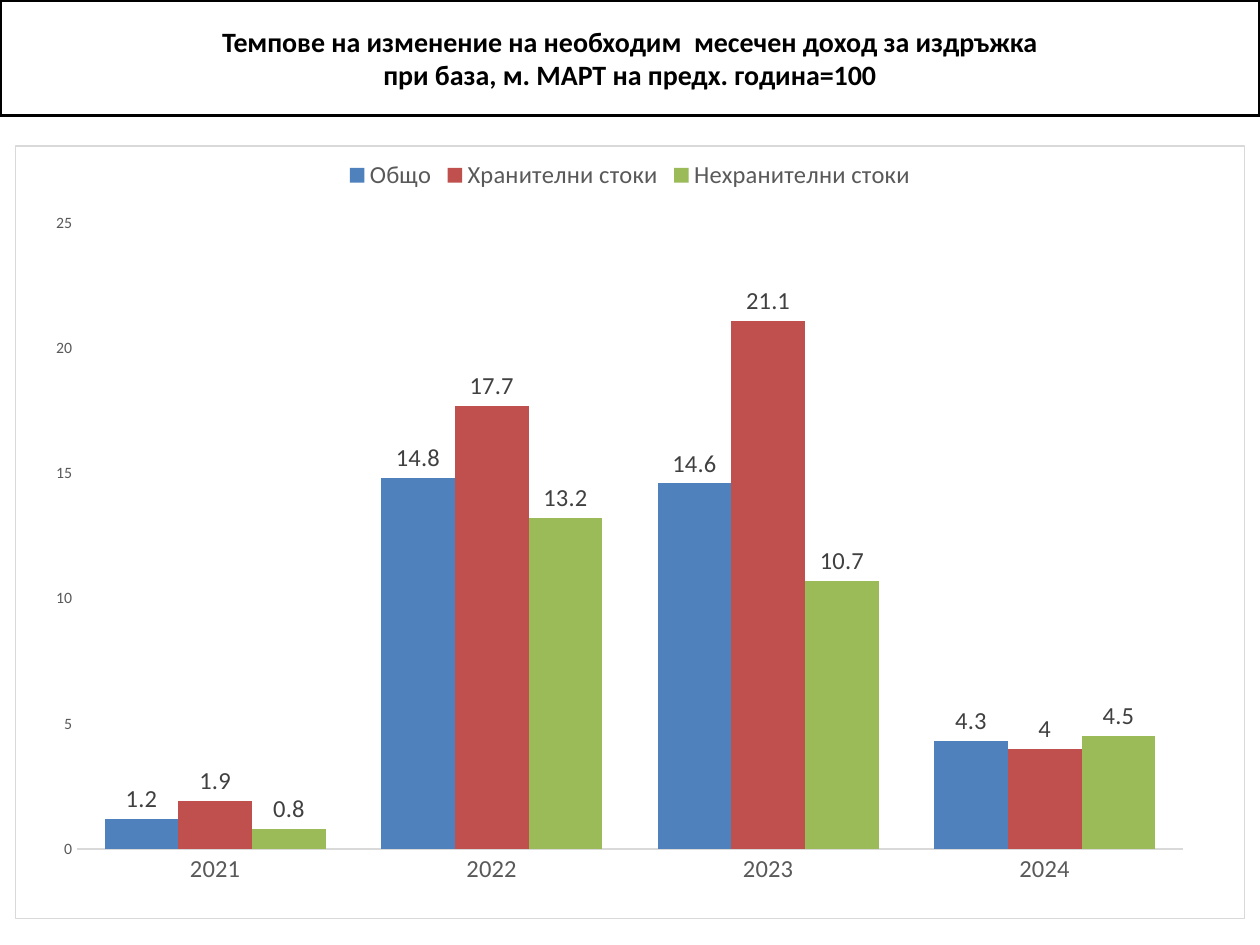
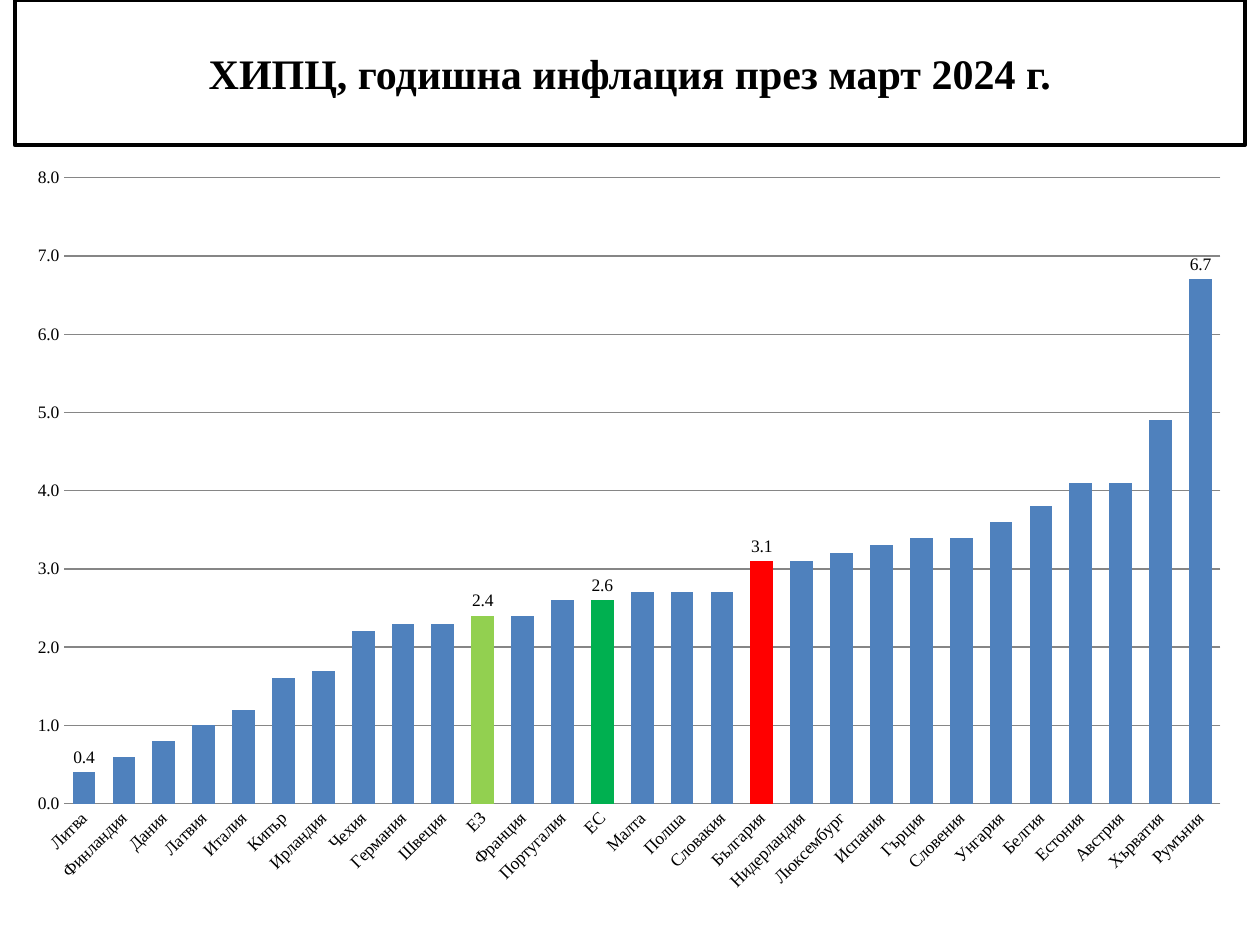
from lxml import etree
from pptx import Presentation
from pptx.chart.data import CategoryChartData
from pptx.dml.color import RGBColor
from pptx.enum.chart import XL_CHART_TYPE, XL_LABEL_POSITION, XL_LEGEND_POSITION, XL_TICK_MARK
from pptx.enum.shapes import MSO_SHAPE
from pptx.enum.text import MSO_ANCHOR, PP_ALIGN
from pptx.oxml import parse_xml
from pptx.oxml.ns import nsdecls, qn
from pptx.util import Cm, Pt

COLUMNS = XL_CHART_TYPE.COLUMN_CLUSTERED
OUTSIDE_END = XL_LABEL_POSITION.OUTSIDE_END
LEGEND_TOP = XL_LEGEND_POSITION.TOP
NO_TICK = XL_TICK_MARK.NONE
RECTANGLE = MSO_SHAPE.RECTANGLE
MIDDLE = MSO_ANCHOR.MIDDLE
CENTER = PP_ALIGN.CENTER

BLACK, WHITE, BLUE = "000000", "FFFFFF", "4F81BD"
TEXT_GREY, LABEL_GREY, RULE_GREY, GRID_GREY = "595959", "404040", "D9D9D9", "868686"
SLIDE_WIDTH, SLIDE_HEIGHT = 25.4, 19.05
MARGIN = 0.3
CONTENT_WIDTH = SLIDE_WIDTH - 2 * MARGIN


def color(hex_code):
    return RGBColor.from_string(hex_code)


def add_chart_slide(title, title_box, title_size, font_name, chart_top, chart_height,
                    categories, series, plot_box, axis_maximum, axis_step):
    """Add a slide with a framed title and a column chart; return the chart."""
    slide = presentation.slides.add_slide(presentation.slide_layouts[6])

    shape = slide.shapes.add_shape(RECTANGLE, *[Cm(length) for length in title_box])
    shape.shadow.inherit = False
    shape.fill.solid()
    shape.fill.fore_color.rgb = color(WHITE)
    shape.line.color.rgb = color(BLACK)
    shape.line.width = Pt(2)
    text_frame = shape.text_frame
    text_frame.word_wrap = True
    text_frame.vertical_anchor = MIDDLE
    paragraph = text_frame.paragraphs[0]
    paragraph.text = title
    paragraph.alignment = CENTER
    for run in paragraph.runs:
        run.font.name = font_name
        run.font.size = Pt(title_size)
        run.font.bold = True
        run.font.color.rgb = color(BLACK)

    chart_data = CategoryChartData()
    chart_data.categories = categories
    for name, values in series:
        chart_data.add_series(name, values)
    chart = slide.shapes.add_chart(COLUMNS, Cm(MARGIN), Cm(chart_top), Cm(CONTENT_WIDTH),
                                   Cm(chart_height), chart_data).chart
    chart.has_title = False
    chart.has_legend = False
    chart.font.name = font_name
    chart.font.size = Pt(10)
    chart.font.color.rgb = color(BLACK)
    chart.plots[0].gap_width = 75
    chart.plots[0].vary_by_categories = False
    for axis in (chart.category_axis, chart.value_axis):
        axis.major_tick_mark = NO_TICK
        axis.minor_tick_mark = NO_TICK
    chart.value_axis.has_major_gridlines = False
    chart.value_axis.minimum_scale = 0
    chart.value_axis.maximum_scale = axis_maximum
    chart.value_axis.major_unit = axis_step
    chart.value_axis.format.line.fill.background()

    plot_area = chart.element.find(".//" + qn("c:plotArea"))
    for old_layout in plot_area.findall(qn("c:layout")):
        plot_area.remove(old_layout)
    layout = etree.Element(qn("c:layout"))
    manual = etree.SubElement(layout, qn("c:manualLayout"))
    settings = [("layoutTarget", "inner"), ("xMode", "edge"), ("yMode", "edge")]
    for tag, value in settings + list(zip("xywh", plot_box)):
        etree.SubElement(manual, qn("c:" + tag)).set("val", str(value))
    plot_area.insert(0, layout)
    return chart


presentation = Presentation()
presentation.slide_width = Cm(SLIDE_WIDTH)
presentation.slide_height = Cm(SLIDE_HEIGHT)

# Slide 1: monthly income needed, by year
income_series = [
    ("Общо", (1.2, 14.8, 14.6, 4.3), BLUE),
    ("Хранителни стоки", (1.9, 17.7, 21.1, 4), "C0504D"),
    ("Нехранителни стоки", (0.8, 13.2, 10.7, 4.5), "9BBB59"),
]
income_chart = add_chart_slide(
    "Темпове на изменение на необходим  месечен доход за издръжка\v"
    "при база, м. МАРТ на предх. година=100",
    (0, 0, SLIDE_WIDTH, 2.33), 16, "Calibri", 2.93, 15.6,
    ["2021", "2022", "2023", "2024"], [entry[:2] for entry in income_series],
    (0.05, 0.1, 0.9, 0.81), 25, 5)
income_chart.plots[0].overlap = 0
for series, (name, values, fill) in zip(income_chart.plots[0].series, income_series):
    series.format.fill.solid()
    series.format.fill.fore_color.rgb = color(fill)
    labels = series.data_labels
    labels.show_value = True
    labels.position = OUTSIDE_END
    labels.font.size = Pt(14)
    labels.font.name = "Calibri"
    labels.font.color.rgb = color(LABEL_GREY)

income_chart.has_legend = True
income_chart.legend.position = LEGEND_TOP
income_chart.legend.include_in_layout = False
for font, size in ((income_chart.legend.font, 14),
                   (income_chart.category_axis.tick_labels.font, 14),
                   (income_chart.value_axis.tick_labels.font, 9)):
    font.size = Pt(size)
    font.name = "Calibri"
    font.color.rgb = color(TEXT_GREY)
income_chart.category_axis.format.line.color.rgb = color(RULE_GREY)
income_chart.category_axis.format.line.width = Pt(0.75)

chart_frame = parse_xml(
    f'<c:spPr {nsdecls("c", "a")}>'
    f'<a:solidFill><a:srgbClr val="{WHITE}"/></a:solidFill>'
    f'<a:ln w="{int(Pt(0.75))}"><a:solidFill><a:srgbClr val="{RULE_GREY}"/></a:solidFill></a:ln>'
    '</c:spPr>')
income_chart.element.find(qn("c:chart")).addnext(chart_frame)

# Slide 2: yearly inflation by country
inflation = {
    "Литва": 0.4, "Финландия": 0.6, "Дания": 0.8, "Латвия": 1, "Италия": 1.2,
    "Кипър": 1.6, "Ирландия": 1.7, "Чехия": 2.2, "Германия": 2.3, "Швеция": 2.3,
    "ЕЗ": 2.4, "Франция": 2.4, "Португалия": 2.6, "ЕС": 2.6, "Малта": 2.7,
    "Полша": 2.7, "Словакия": 2.7, "България": 3.1, "Нидерландия": 3.1,
    "Люксембург": 3.2, "Испания": 3.3, "Гърция": 3.4, "Словения": 3.4,
    "Унгария": 3.6, "Белгия": 3.8, "Естония": 4.1, "Австрия": 4.1,
    "Хърватия": 4.9, "Румъния": 6.7,
}
labelled_columns = {"Литва": BLUE, "ЕЗ": "92D050", "ЕС": "00B050",
                    "България": "FF0000", "Румъния": BLUE}
countries = list(inflation)
inflation_chart = add_chart_slide(
    "ХИПЦ, годишна инфлация през март 2024 г.",
    (MARGIN, 0, CONTENT_WIDTH, 2.93), 24, "Times New Roman", 3.13, 15.2,
    countries, [("Series 1", list(inflation.values()))],
    (0.04, 0.03, 0.94, 0.83), 8, 1)
inflation_chart.plots[0].overlap = -25
columns = inflation_chart.plots[0].series[0]
columns.format.fill.solid()
columns.format.fill.fore_color.rgb = color(BLUE)
columns.data_labels.show_value = False
for country, fill in labelled_columns.items():
    point = columns.points[countries.index(country)]
    point.format.fill.solid()
    point.format.fill.fore_color.rgb = color(fill)
    label = point.data_label
    label.position = OUTSIDE_END
    label.font.size = Pt(10)
    label.font.name = "Times New Roman"
    label.font.color.rgb = color(BLACK)

value_axis = inflation_chart.value_axis
value_axis.has_major_gridlines = True
value_axis.tick_labels.number_format = "#,##0.0"
value_axis.tick_labels.number_format_is_linked = False
category_axis = inflation_chart.category_axis
for line in (value_axis.major_gridlines.format.line, category_axis.format.line):
    line.color.rgb = color(GRID_GREY)
    line.width = Pt(0.75)
country_font = category_axis.tick_labels.font
country_font.size = Pt(10)
country_font.name = "Times New Roman"
country_font.color.rgb = color(BLACK)
country_text = inflation_chart.element.find(".//" + qn("c:catAx") + "/" + qn("c:txPr"))
country_text.find(qn("a:bodyPr")).set("rot", str(-45 * 60000))

presentation.save("out.pptx")
